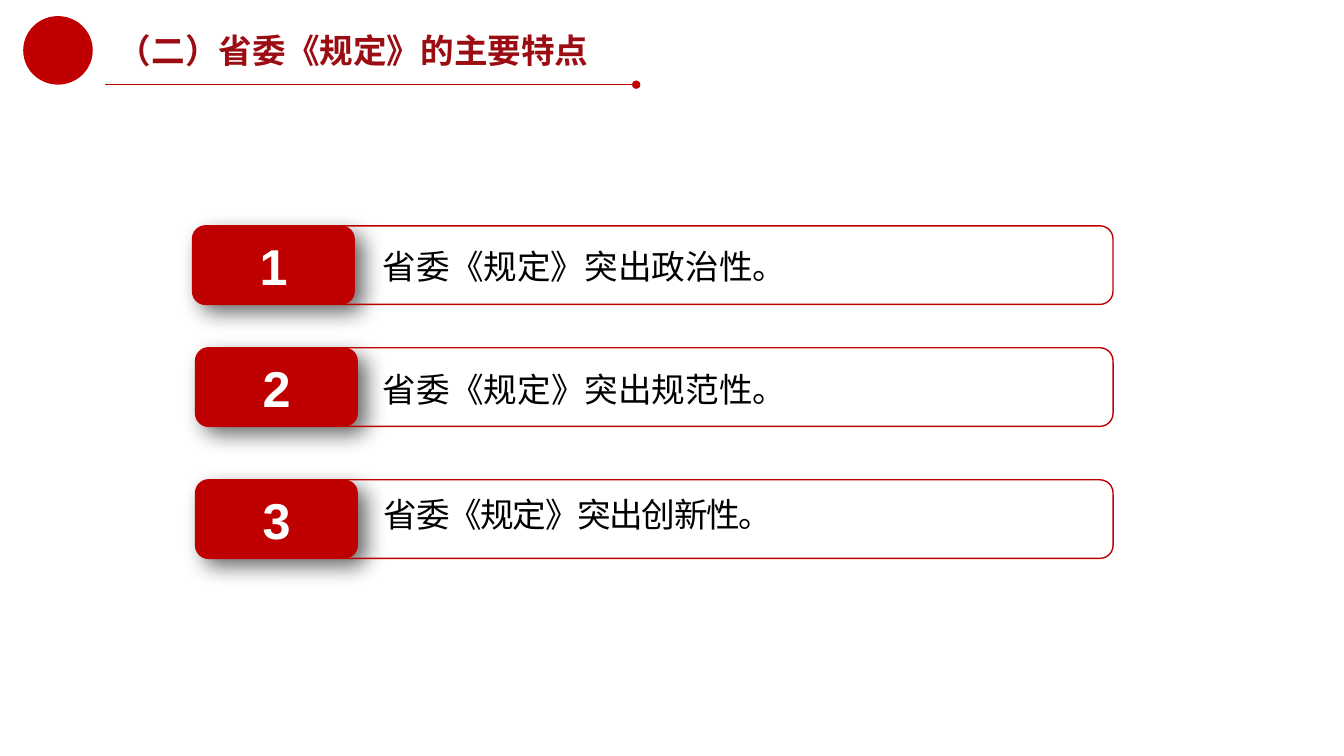
import pptx
import pptx.util
import pptx.dml.color
import pptx.enum.shapes
import pptx.enum.text
import pptx.oxml
import pptx.oxml.ns
from pptx.util import Inches

RED = "C00000"
BADGE_RED = "BE0000"
TITLE_RED = "9B0D13"
WHITE = "FFFFFF"
BLACK = "000000"
LATIN = "Arial"
CHINESE = "Noto Sans CJK SC"


def color(value):
    return pptx.dml.color.RGBColor.from_string(value)


def add_xml(parent, tag, **attributes):
    child = pptx.oxml.parse_xml(f'<a:{tag} {pptx.oxml.ns.nsdecls("a")}/>')
    for name, value in attributes.items():
        child.set(name, str(value))
    parent.append(child)
    return child


class SlideBuilder:
    def __init__(self, deck):
        self.page = deck.slides.add_slide(deck.slide_layouts[5])

    def set_text(self, frame, text, size, ink, font=LATIN, bold=False, spacing=None):
        frame.word_wrap = True
        frame.text = text
        para = frame.paragraphs[0]
        span = para.runs[0]
        span.font.size = pptx.util.Pt(size)
        span.font.bold = bold
        span.font.color.rgb = color(ink)
        span.font.name = font
        properties = span.font._element
        add_xml(properties, "ea", typeface=CHINESE)
        if spacing is not None:
            properties.set("spc", str(spacing * 100))
        return para

    def title(self, text, left, top, width, height):
        box = self.page.shapes.title
        box.left, box.top = Inches(left), Inches(top)
        box.width, box.height = Inches(width), Inches(height)
        frame = box.text_frame
        para = self.set_text(frame, text, 24, TITLE_RED, CHINESE, bold=True)
        para.alignment = pptx.enum.text.PP_ALIGN.LEFT
        para.line_spacing = 0.9
        frame.auto_size = pptx.enum.text.MSO_AUTO_SIZE.NONE
        frame.vertical_anchor = pptx.enum.text.MSO_ANCHOR.MIDDLE

    def rule(self, left, right, top):
        line = self.page.shapes.add_connector(
            pptx.enum.shapes.MSO_CONNECTOR.STRAIGHT,
            Inches(left), Inches(top), Inches(right), Inches(top))
        line.line.color.rgb = color(RED)
        line.line.width = pptx.util.Pt(0.75)
        outline = line._element.spPr.find(pptx.oxml.ns.qn("a:ln"))
        add_xml(outline, "tailEnd", type="oval")
        add_xml(line._element.spPr, "effectLst")

    def shape(self, parent, kind, left, top, width, height, fill=None, outline=None):
        shape = parent.shapes.add_shape(
            kind, Inches(left), Inches(top), Inches(width), Inches(height))
        if fill:
            shape.fill.solid()
            shape.fill.fore_color.rgb = color(fill)
        else:
            shape.fill.background()
        if outline:
            shape.line.color.rgb = color(outline)
            shape.line.width = pptx.util.Pt(1)
        else:
            shape.line.fill.background()
        shape.shadow.inherit = False
        return shape

    def drop_shadow(self, shape):
        effects = shape._element.spPr.find(pptx.oxml.ns.qn("a:effectLst"))
        shadow = add_xml(effects, "outerShdw", blurRad=pptx.util.Pt(16),
                         dist=pptx.util.Pt(8), dir=45 * 60000,
                         algn="tl", rotWithShape=0)
        add_xml(add_xml(shadow, "srgbClr", val=BLACK), "alpha", val=60000)

    def point(self, number, text, left, top, text_left, text_top, text_width, spacing):
        group = self.page.shapes.add_group_shape()
        rounded = pptx.enum.shapes.MSO_SHAPE.ROUNDED_RECTANGLE
        right, height = 11.04, 0.78

        # Number badge with its shadow
        badge = self.shape(group, rounded, left, top, 1.61, height, fill=BADGE_RED)
        self.drop_shadow(badge)
        para = self.set_text(badge.text_frame, str(number), 36, WHITE, bold=True)
        para.alignment = pptx.enum.text.PP_ALIGN.CENTER
        badge.text_frame.vertical_anchor = pptx.enum.text.MSO_ANCHOR.MIDDLE

        # Frame and wording
        self.shape(group, rounded, left, top, right - left, height, outline=BADGE_RED)
        box = group.shapes.add_textbox(
            Inches(text_left), Inches(text_top), Inches(text_width), Inches(0.5))
        self.set_text(box.text_frame, text, 24, BLACK, spacing=spacing)
        box.text_frame.auto_size = pptx.enum.text.MSO_AUTO_SIZE.SHAPE_TO_FIT_TEXT


def main():
    deck = pptx.Presentation()
    deck.slide_width, deck.slide_height = Inches(13.33), Inches(7.5)
    builder = SlideBuilder(deck)

    # Header
    builder.rule(1.04, 6.31, 0.84)
    builder.shape(builder.page, pptx.enum.shapes.MSO_SHAPE.OVAL,
                  0.23, 0.16, 0.69, 0.68, fill=RED)
    builder.title("（二）省委《规定》的主要特点", 1.07, 0.28, 10.92, 0.49)

    # Numbered points: text, left, top, text left, text top, text width, spacing
    points = [
        ("省委《规定》突出政治性。", 1.91, 2.24, 3.7, 2.39, 7.04, None),
        ("省委《规定》突出规范性。", 1.94, 3.45, 3.7, 3.61, 7.05, None),
        ("省委《规定》突出创新性。", 1.94, 4.76, 3.71, 4.85, 7.32, -1),
    ]
    for number, point in enumerate(points, start=1):
        builder.point(number, *point)

    deck.save("out.pptx")


if __name__ == "__main__":
    main()
